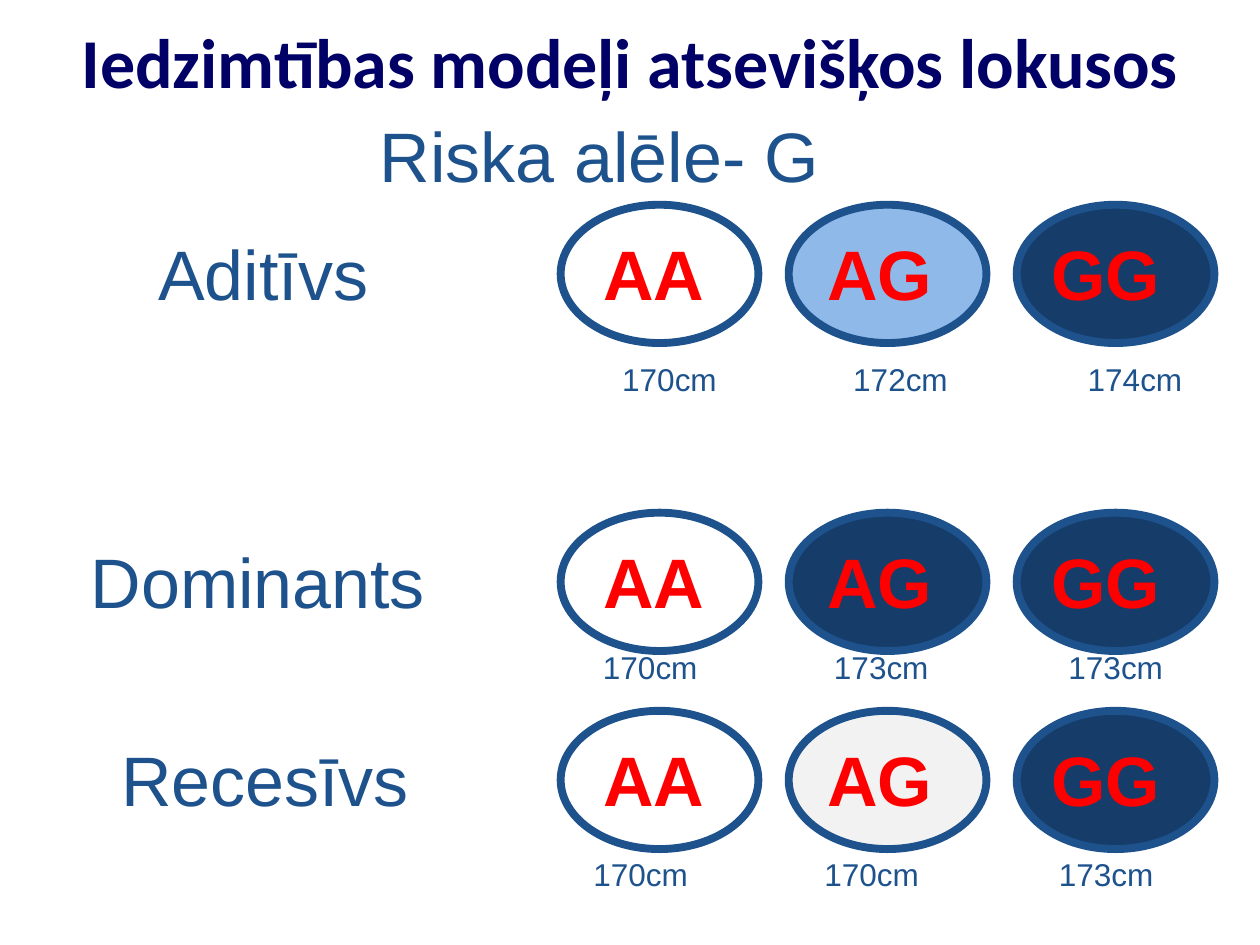
from pptx import Presentation
from pptx.dml.color import RGBColor
from pptx.enum.shapes import MSO_SHAPE
from pptx.enum.text import MSO_ANCHOR, PP_ALIGN
from pptx.oxml.ns import qn
from pptx.util import Pt
from lxml.etree import SubElement

BLUE, NAVY, RED, TITLE = "1D528D", "163D6A", "FF0000", "000066"
WHITE, LIGHT, GREY = "FFFFFF", "8EB9E8", "F2F2F2"
LARGE = {"size": Pt(40), "name": "Arial"}
SMALL = {"size": Pt(18), "name": "Arial"}

ELLIPSE_LEFT, ELLIPSE_STEP = 320.4, 130.3
ELLIPSE_WIDTH, ELLIPSE_HEIGHT = 113, 79
TEXT_OFFSET, TEXT_HEIGHT = 11.2, 55.4
GENOTYPE_RIGHT = 89
GENOTYPES = [("AA", 72), ("AG", 75), ("GG", 77)]
HEIGHT_TABS = [132, 266]

# name, label left and width, row top, fills, heights, their left and offset
MODELS = [
    ("Aditīvs", 82, 135.4, 117, [WHITE, LIGHT, NAVY],
     ["170cm", "172cm", "174cm"], 348.5, 85.3),
    ("Dominants", 42.5, 207.4, 293, [WHITE, NAVY, NAVY],
     ["170cm", "173cm", "173cm"], 337.5, 73.5),
    ("Recesīvs", 60, 180.7, 406.2, [WHITE, GREY, NAVY],
     ["170cm", "170cm", "173cm"], 332, 79.1),
]


def color(value):
    return RGBColor.from_string(value)


def format_run(run, hex_color, formats):
    for name, value in formats.items():
        setattr(run.font, name, value)
    run.font.color.rgb = color(hex_color)


def add_text(slide, box, text, hex_color, formats, align=PP_ALIGN.RIGHT,
             wrap=False, tabs=()):
    shape = slide.shapes.add_textbox(*map(Pt, box))
    shape.text_frame.word_wrap = wrap
    paragraph = shape.text_frame.paragraphs[0]
    paragraph.alignment = align
    if tabs:
        properties = paragraph._p.get_or_add_pPr()
        tab_list = SubElement(properties, qn("a:tabLst"))
        for position in tabs:
            SubElement(tab_list, qn("a:tab"), pos=str(Pt(position)), algn="l")
    run = paragraph.add_run()
    run.text = text
    format_run(run, hex_color, formats)


def add_title(slide, box, text):
    title = slide.shapes.title
    title.left, title.top, title.width, title.height = map(Pt, box)
    title.text_frame.vertical_anchor = MSO_ANCHOR.MIDDLE
    paragraph = title.text_frame.paragraphs[0]
    paragraph.alignment = PP_ALIGN.CENTER
    run = paragraph.add_run()
    run.text = text
    format_run(run, TITLE, {"size": Pt(40), "name": "Calibri", "bold": True})


def add_genotype(slide, left, top, text, text_width, fill):
    ellipse = slide.shapes.add_shape(
        MSO_SHAPE.OVAL, Pt(left), Pt(top), Pt(ELLIPSE_WIDTH), Pt(ELLIPSE_HEIGHT))
    ellipse.shadow.inherit = False
    ellipse.fill.solid()
    ellipse.fill.fore_color.rgb = color(fill)
    ellipse.line.color.rgb = color(BLUE)
    ellipse.line.width = Pt(4.5)
    box = (left + GENOTYPE_RIGHT - text_width, top + TEXT_OFFSET,
           text_width, TEXT_HEIGHT)
    add_text(slide, box, text, RED, {**LARGE, "bold": True})


def add_model(slide, name, label_left, label_width, top, fills,
              heights, heights_left, heights_offset):
    """Place one inheritance model: its label, three genotypes and heights."""
    add_text(slide, (label_left, top + TEXT_OFFSET, label_width, TEXT_HEIGHT),
             name, BLUE, LARGE)
    for column, ((genotype, width), fill) in enumerate(zip(GENOTYPES, fills)):
        add_genotype(slide, ELLIPSE_LEFT + column * ELLIPSE_STEP, top,
                     genotype, width, fill)
    add_text(slide, (heights_left, top + heights_offset, 340, 29),
             "\t".join(heights), BLUE, SMALL, PP_ALIGN.LEFT, True, HEIGHT_TABS)


def main():
    presentation = Presentation()
    presentation.slide_width, presentation.slide_height = Pt(720), Pt(540)
    slide = presentation.slides.add_slide(presentation.slide_layouts[5])
    add_title(slide, (36, 12.2, 648, 44.6),
              "Iedzimtības modeļi atsevišķos lokusos")
    add_text(slide, (206.6, 60.5, 268.6, TEXT_HEIGHT), "Riska alēle- G",
             BLUE, LARGE)
    for model in MODELS:
        add_model(slide, *model)
    presentation.save("out.pptx")


if __name__ == "__main__":
    main()
